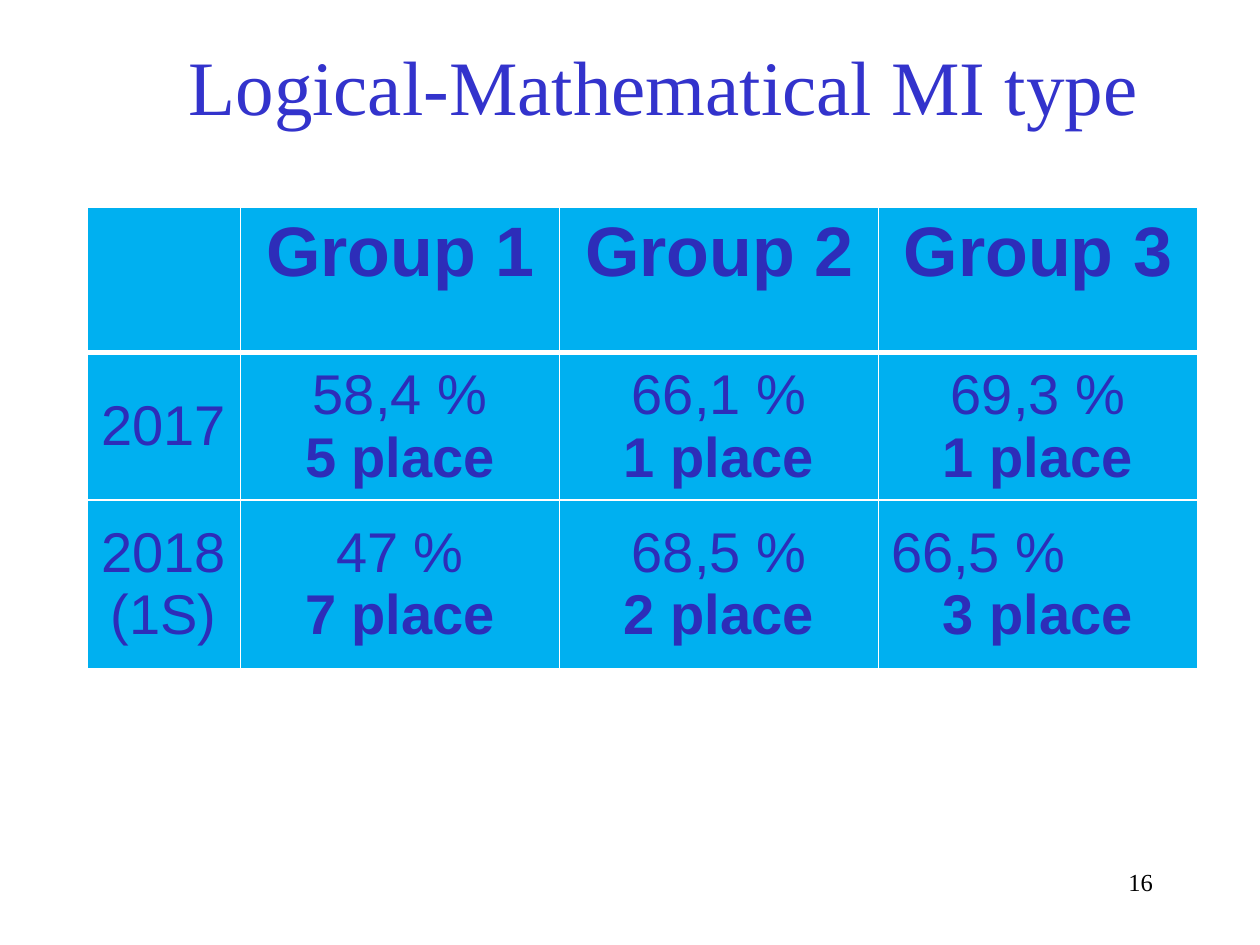
"""Build the slide that compares three groups on the logical-mathematical type."""
from lxml import etree
from pptx import Presentation
from pptx import oxml
from pptx.dml import color
from pptx.enum import text
from pptx.util import Cm, Pt

COLORS = {"title": "3333CC", "number": "000000", "cell": "00B0F0",
          "table_text": "2D2DB9", "border": "FFFFFF"}
CENTER, LEFT, RIGHT = text.PP_ALIGN.CENTER, text.PP_ALIGN.LEFT, text.PP_ALIGN.RIGHT
MIDDLE, TOP = text.MSO_ANCHOR.MIDDLE, text.MSO_ANCHOR.TOP


def style_paragraph(paragraph, align, font_name, size, hex_color, bold=False):
    paragraph.alignment = align
    for run in paragraph.runs:
        run.font.name = font_name
        run.font.size = Pt(size)
        run.font.bold = bold
        run.font.color.rgb = color.RGBColor.from_string(hex_color)


def add_border(cell, side, width):
    properties = cell._tc.get_or_add_tcPr()
    line = etree.SubElement(properties, oxml.ns.qn(f"a:ln{side}"), w=str(Pt(width)))
    fill = etree.SubElement(line, oxml.ns.qn("a:solidFill"))
    etree.SubElement(fill, oxml.ns.qn("a:srgbClr"), val=COLORS["border"])


presentation = Presentation()
presentation.slide_width = Cm(25.4)
presentation.slide_height = Cm(19.05)
slide = presentation.slides.add_slide(presentation.slide_layouts[6])

labels = [
    ("16", (18.21, 17.35, 5.28, 1.27), TOP, RIGHT, 14, "number"),
    ("Logical-Mathematical MI type", (1.9, 0.5, 22.96, 2.4), MIDDLE, CENTER, 44, "title"),
]
for content, place, anchor, align, size, color_name in labels:
    shape = slide.shapes.add_textbox(*map(Cm, place))
    text_frame = shape.text_frame
    text_frame.word_wrap = True
    text_frame.vertical_anchor = anchor
    text_frame.text = content
    style_paragraph(text_frame.paragraphs[0], align, "Times New Roman", size, COLORS[color_name])

rows = [
    ["", "Group 1", "Group 2", "Group 3"],
    ["2017", "58,4 %\n5 place", "66,1 %\n1 place", "69,3 %\n1 place"],
    ["2018 (1S)", "47 %\n7 place", "68,5 %\n2 place", "66,5 %\n3 place"],
]
column_widths = [3.1, 6.43, 6.43, 6.43]
row_heights = [2.93, 2.78, 3.4]
frame = slide.shapes.add_table(len(rows), len(column_widths), Cm(1.75), Cm(4.18),
                               Cm(sum(column_widths)), Cm(sum(row_heights)))
table = frame.table
for column, width in zip(table.columns, column_widths):
    column.width = Cm(width)
for row, height in zip(table.rows, row_heights):
    row.height = Cm(height)

for row_index, row in enumerate(rows):
    header = row_index == 0
    for column_index, content in enumerate(row):
        cell = table.cell(row_index, column_index)
        border_widths = {"L": 1, "R": 1, "T": 3 if row_index == 1 else 1, "B": 3 if header else 1}
        for side, width in border_widths.items():
            add_border(cell, side, width)
        cell.fill.solid()
        cell.fill.fore_color.rgb = color.RGBColor.from_string(COLORS["cell"])
        cell.vertical_anchor = TOP if header else MIDDLE
        cell.text_frame.text = content
        for line_index, paragraph in enumerate(cell.text_frame.paragraphs):
            style_paragraph(paragraph, CENTER, "Arial", 40 if header else 32,
                            COLORS["table_text"], header or line_index == 1)

table.cell(2, 3).text_frame.paragraphs[0].alignment = LEFT

presentation.save("out.pptx")
